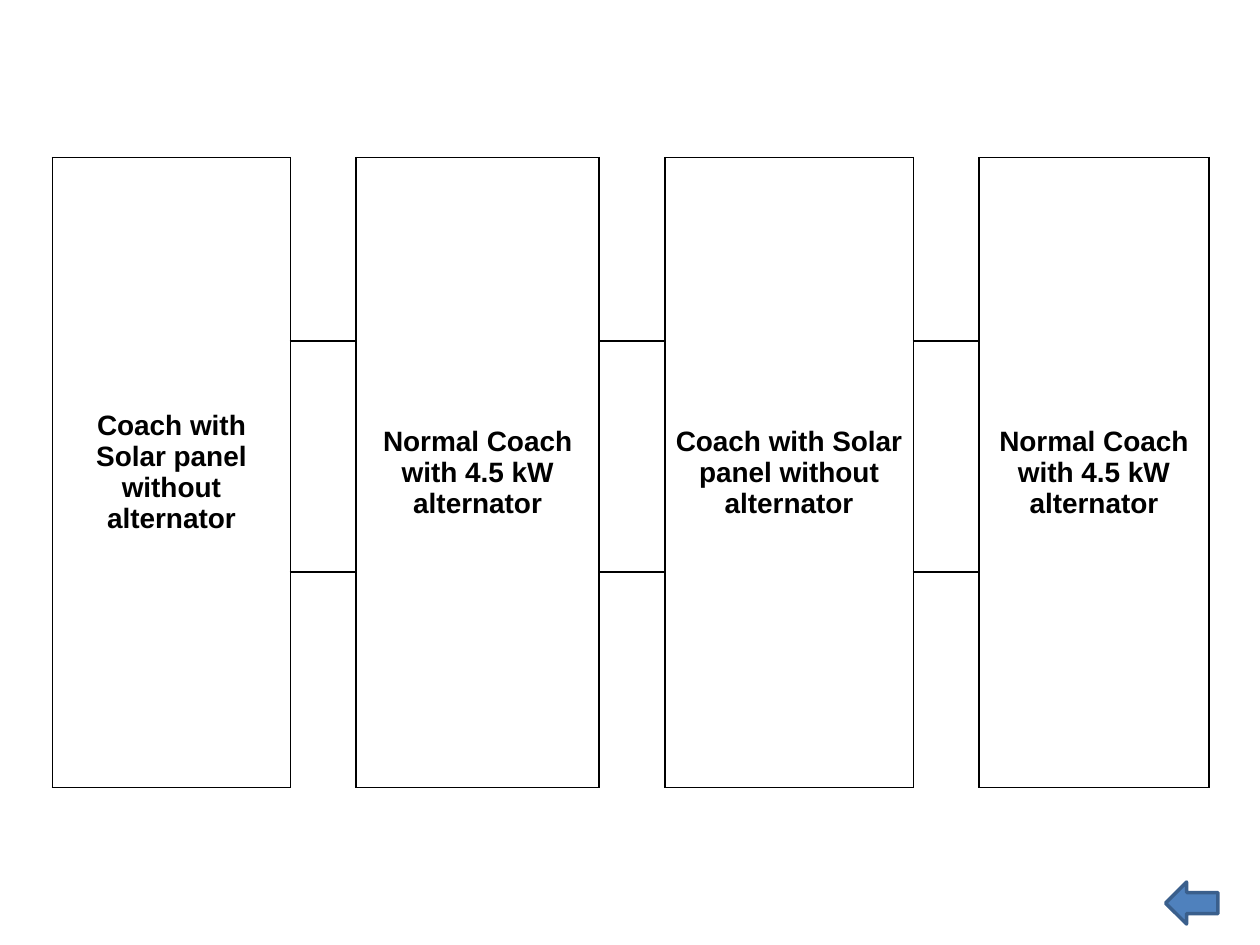
from dataclasses import dataclass

from lxml.etree import SubElement
from pptx import Presentation
from pptx.dml.color import RGBColor
from pptx.enum.shapes import MSO_SHAPE
from pptx.enum.text import MSO_ANCHOR, PP_ALIGN
from pptx.oxml.ns import qn
from pptx.util import Pt


@dataclass(frozen=True)
class Theme:
    ink: str = "000000"
    arrow_fill: str = "4F81BD"
    arrow_line: str = "3A5F8C"
    font: str = "Arial"
    label_size: int = 16


THEME = Theme()
SOLAR = "Coach with Solar panel without alternator"
NORMAL = "Normal Coach with 4.5 kW alternator"
COACHES = [(SOLAR, 136), (NORMAL, 139), (SOLAR, 142), (NORMAL, 131.5)]
GAP_WIDTH = 37.5
ROW_HEIGHTS = [105, 132, 123]
GAP_SIDES = ["LRB", "LRTB", "LRT"]


def set_borders(cell, sides):
    properties = cell._tc.get_or_add_tcPr()
    for side in "LRTB":
        line = SubElement(properties, qn(f"a:ln{side}"), w=str(Pt(1)))
        if side in sides:
            fill = SubElement(line, qn("a:solidFill"))
            SubElement(fill, qn("a:srgbClr"), val=THEME.ink)
        else:
            SubElement(line, qn("a:noFill"))
    cell.fill.background()


def write_label(cell, text):
    cell.text = text
    cell.vertical_anchor = MSO_ANCHOR.MIDDLE
    cell.margin_left = cell.margin_right = Pt(5)
    cell.margin_top = cell.margin_bottom = Pt(0)
    para = cell.text_frame.paragraphs[0]
    para.alignment = PP_ALIGN.CENTER
    para.font.name = THEME.font
    para.font.size = Pt(THEME.label_size)
    para.font.bold = True
    para.font.color.rgb = RGBColor.from_string(THEME.ink)


def add_coach_table(page, left, top):
    widths = [COACHES[0][1]]
    for _, width in COACHES[1:]:
        widths += [GAP_WIDTH, width]
    frame = page.shapes.add_table(
        len(ROW_HEIGHTS), len(widths), Pt(left), Pt(top),
        Pt(sum(widths)), Pt(sum(ROW_HEIGHTS)))
    table = frame.table
    table.first_row = table.horz_banding = False
    for column, width in zip(table.columns, widths):
        column.width = Pt(width)
    for row, height in zip(table.rows, ROW_HEIGHTS):
        row.height = Pt(height)
    for row_index, gap_sides in enumerate(GAP_SIDES):
        for column_index in range(len(widths)):
            is_gap = column_index % 2 == 1
            set_borders(table.cell(row_index, column_index),
                        gap_sides if is_gap else "LRTB")
    for index, (text, _) in enumerate(COACHES):
        cell = table.cell(0, 2 * index)
        cell.merge(table.cell(len(ROW_HEIGHTS) - 1, 2 * index))
        write_label(cell, text)


def add_back_arrow(page, left, top, width, height):
    arrow = page.shapes.add_shape(
        MSO_SHAPE.RIGHT_ARROW, Pt(left), Pt(top), Pt(width), Pt(height))
    arrow.rotation = 180
    arrow.shadow.inherit = False
    arrow.fill.solid()
    arrow.fill.fore_color.rgb = RGBColor.from_string(THEME.arrow_fill)
    arrow.line.color.rgb = RGBColor.from_string(THEME.arrow_line)
    arrow.line.width = Pt(2)


def main():
    deck = Presentation()
    deck.slide_width, deck.slide_height = Pt(720), Pt(540)
    page = deck.slides.add_slide(deck.slide_layouts[6])
    add_coach_table(page, 30, 90)
    add_back_arrow(page, 666, 504, 30, 24)
    deck.save("out.pptx")


if __name__ == "__main__":
    main()
